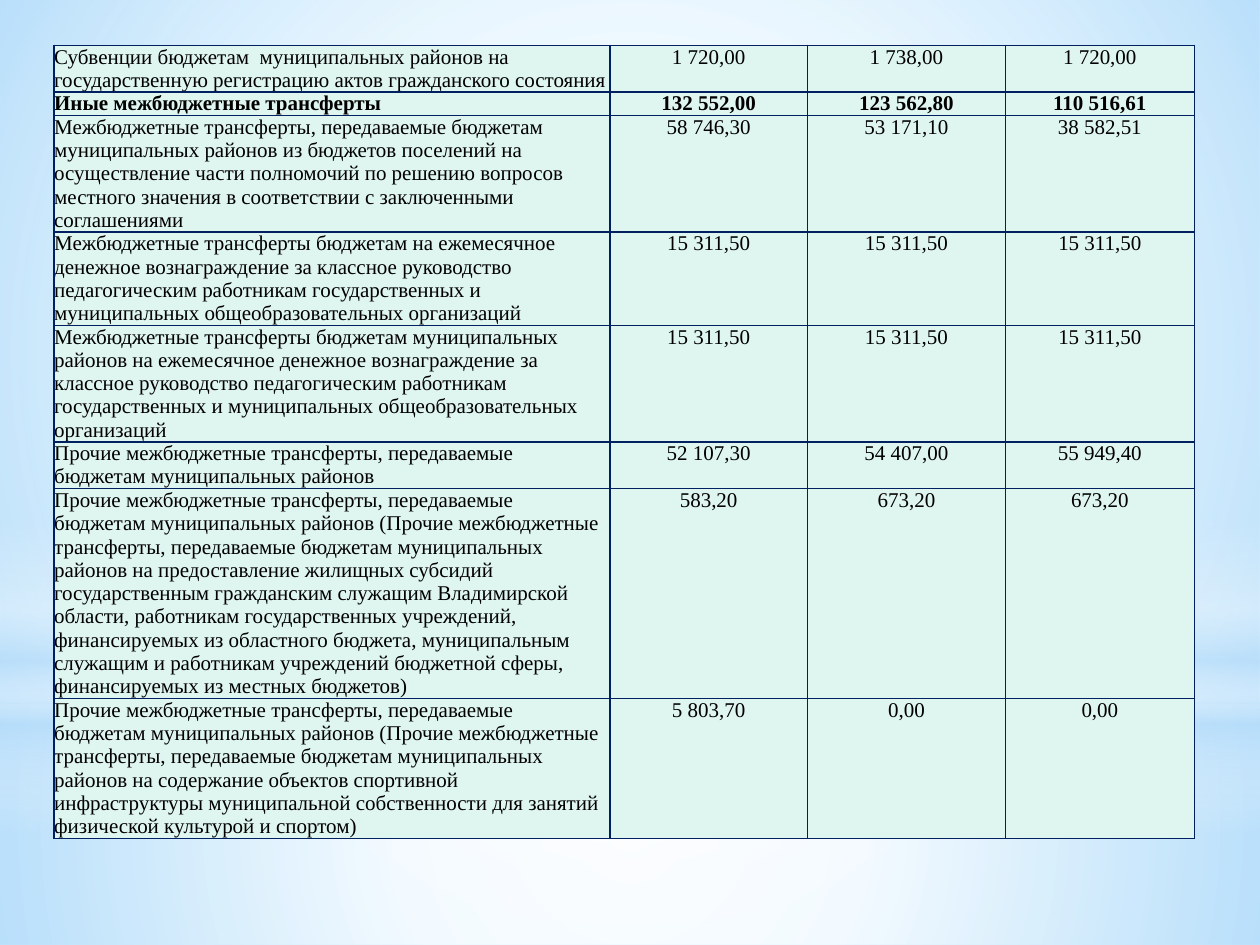
from lxml import etree
from pptx import Presentation
from pptx.dml.color import RGBColor
from pptx.enum.shapes import MSO_SHAPE
from pptx.enum.text import MSO_ANCHOR, PP_ALIGN
from pptx.oxml import parse_xml
from pptx.oxml.ns import qn
from pptx.util import Inches, Pt

RECTANGLE, OVAL = MSO_SHAPE.RECTANGLE, MSO_SHAPE.OVAL
TOP, BOTTOM = MSO_ANCHOR.TOP, MSO_ANCHOR.BOTTOM
LEFT, CENTER = PP_ALIGN.LEFT, PP_ALIGN.CENTER

NAMESPACE = "http://schemas.openxmlformats.org/drawingml/2006/main"
FONT = "Times New Roman"
WHITE, SKY, PALE_SKY = "FFFFFF", "B4DCFA", "CCECFF"
MINT, NAVY, BLACK = "DFF5EF", "002060", "000000"
LINE_HEIGHT = 0.18
COLUMN_WIDTHS = (4.41, 1.57, 1.57, 1.5)

RADIAL = ('<a:path path="circle"><a:fillToRect l="50000" t="50000" '
          'r="50000" b="50000"/></a:path>')
VERTICAL = '<a:lin ang="5400000" scaled="0"/>'

# Each glow: shape, (left, top, width, height), direction, (position, colour, opacity).
GLOWS = (
    (RECTANGLE, (0, 5.58, 10, 1.92), RADIAL,
     ((0, WHITE, 91), (37, WHITE, 76), (100, SKY, 79))),
    (RECTANGLE, (0, 0, 10, 5.58), RADIAL,
     ((0, WHITE, 89), (48, WHITE, 62), (100, SKY, 79))),
    (RECTANGLE, (0, 4.12, 10, 2.5), VERTICAL,
     ((0, WHITE, 0), (29, WHITE, 30), (45, SKY, 40),
      (55, WHITE, 26), (65, SKY, 60), (100, WHITE, 0))),
    (OVAL, (0, 1.75, 10, 5.58), RADIAL,
     ((0, WHITE, 100), (56, WHITE, 0))),
)

# Each transfer: name, yearly amounts, lines of text, anchor, bold.
TRANSFERS = (
    ("Субвенции бюджетам  муниципальных районов на государственную регистрацию "
     "актов гражданского состояния",
     ("1 720,00", "1 738,00", "1 720,00"), 2, BOTTOM, False),
    ("Иные межбюджетные трансферты",
     ("132 552,00", "123 562,80", "110 516,61"), 1, BOTTOM, True),
    ("Межбюджетные трансферты, передаваемые бюджетам муниципальных районов из "
     "бюджетов поселений на осуществление части полномочий по решению вопросов "
     "местного значения в соответствии с заключенными соглашениями",
     ("58 746,30", "53 171,10", "38 582,51"), 5, TOP, False),
    ("Межбюджетные трансферты бюджетам на ежемесячное денежное вознаграждение за "
     "классное руководство педагогическим работникам государственных и "
     "муниципальных общеобразовательных организаций",
     ("15 311,50", "15 311,50", "15 311,50"), 4, BOTTOM, False),
    ("Межбюджетные трансферты бюджетам муниципальных районов на ежемесячное "
     "денежное вознаграждение за классное руководство педагогическим работникам "
     "государственных и муниципальных общеобразовательных организаций",
     ("15 311,50", "15 311,50", "15 311,50"), 5, TOP, False),
    ("Прочие межбюджетные трансферты, передаваемые бюджетам муниципальных районов",
     ("52 107,30", "54 407,00", "55 949,40"), 2, TOP, False),
    ("Прочие межбюджетные трансферты, передаваемые бюджетам муниципальных районов "
     "(Прочие межбюджетные трансферты, передаваемые бюджетам муниципальных районов "
     "на предоставление жилищных субсидий государственным гражданским служащим "
     "Владимирской области, работникам государственных учреждений, финансируемых "
     "из областного бюджета, муниципальным служащим и работникам учреждений "
     "бюджетной сферы, финансируемых из местных бюджетов)",
     ("583,20", "673,20", "673,20"), 9, BOTTOM, False),
    ("Прочие межбюджетные трансферты, передаваемые бюджетам муниципальных районов "
     "(Прочие межбюджетные трансферты, передаваемые бюджетам муниципальных районов "
     "на содержание объектов спортивной инфраструктуры муниципальной собственности "
     "для занятий физической культурой и спортом)",
     ("5 803,70", "0,00", "0,00"), 6, TOP, False),
)


def paint(fill, color):
    """Give a fill one solid colour from a hex string."""
    fill.solid()
    fill.fore_color.rgb = RGBColor.from_string(color)


def add_glow(slide, outline, box, direction, stops):
    """Add a borderless shape with a translucent gradient."""
    glow = slide.shapes.add_shape(outline, *map(Inches, box))
    glow.shadow.inherit = False
    glow.line.fill.background()
    stop_list = "".join(
        f'<a:gs pos="{position * 1000}"><a:srgbClr val="{color}">'
        f'<a:alpha val="{opacity * 1000}"/></a:srgbClr></a:gs>'
        for position, color, opacity in stops)
    gradient = parse_xml(
        f'<a:gradFill xmlns:a="{NAMESPACE}" rotWithShape="1">'
        f'<a:gsLst>{stop_list}</a:gsLst>{direction}</a:gradFill>')
    glow._element.spPr.find(qn("a:prstGeom")).addnext(gradient)


def add_borders(cell):
    """Draw a one-point line on every side of a cell."""
    properties = cell._tc.get_or_add_tcPr()
    for index, side in enumerate(("lnL", "lnR", "lnT", "lnB")):
        border = etree.Element(qn(f"a:{side}"), w=str(Pt(1)))
        solid = etree.SubElement(border, qn("a:solidFill"))
        etree.SubElement(solid, qn("a:srgbClr"), val=NAVY)
        properties.insert(index, border)


def write(cell, text, align=LEFT, anchor=TOP, bold=False, size=12, color=BLACK):
    """Put formatted text in a cell without margins."""
    cell.margin_left = cell.margin_right = cell.margin_top = cell.margin_bottom = 0
    cell.vertical_anchor = anchor
    paragraph = cell.text_frame.paragraphs[0]
    paragraph.alignment = align
    run = paragraph.add_run()
    run.text = text
    run.font.name = FONT
    run.font.size = Pt(size)
    run.font.bold = bold
    run.font.color.rgb = RGBColor.from_string(color)


def add_budget_table(slide):
    """Add the table of transfers with three yearly amounts."""
    total_height = LINE_HEIGHT * sum(transfer[2] for transfer in TRANSFERS)
    budget = slide.shapes.add_table(
        len(TRANSFERS), len(COLUMN_WIDTHS), Inches(0.43), Inches(0.36),
        Inches(sum(COLUMN_WIDTHS)), Inches(total_height)).table
    budget.first_row = budget.horz_banding = False
    for column, width in zip(budget.columns, COLUMN_WIDTHS):
        column.width = Inches(width)
    for row, (name, amounts, lines, anchor, bold) in zip(budget.rows, TRANSFERS):
        row.height = Inches(lines * LINE_HEIGHT)
        name_cell, *amount_cells = row.cells
        write(name_cell, name, anchor=anchor, bold=bold)
        for cell, amount in zip(amount_cells, amounts):
            write(cell, amount, align=CENTER, bold=bold)
        for cell in row.cells:
            paint(cell.fill, MINT)
            add_borders(cell)


def main():
    """Build the slide and save it."""
    presentation = Presentation()
    presentation.slide_width, presentation.slide_height = Inches(10), Inches(7.5)
    slide = presentation.slides.add_slide(presentation.slide_layouts[6])
    paint(slide.background.fill, PALE_SKY)
    for glow in GLOWS:
        add_glow(slide, *glow)
    add_budget_table(slide)
    presentation.save("out.pptx")


if __name__ == "__main__":
    main()
